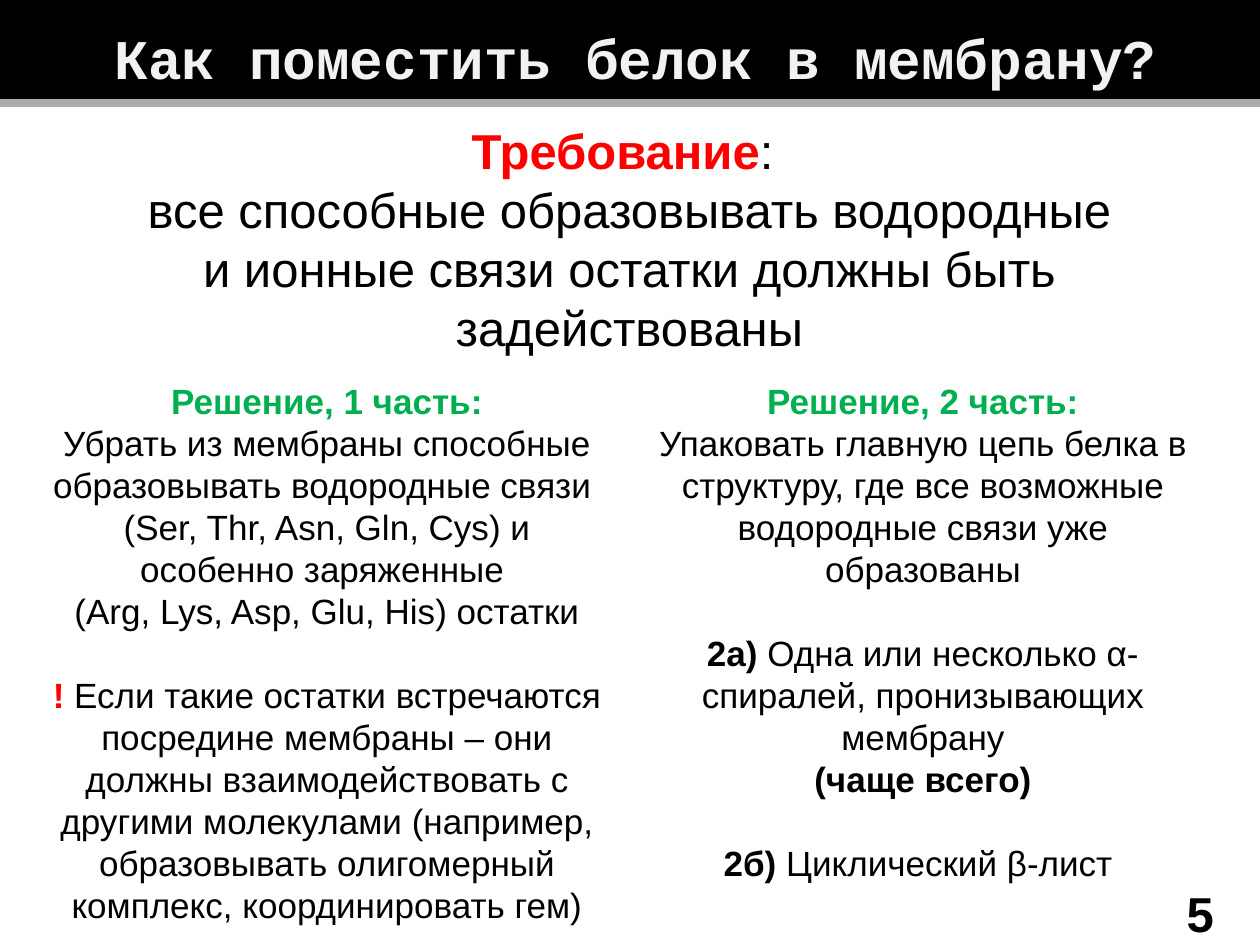
from pptx import Presentation
from pptx.dml.color import RGBColor as RGB
from pptx.enum.shapes import MSO_CONNECTOR as Conn, MSO_SHAPE as Shape
from pptx.enum.text import MSO_ANCHOR as Anchor, MSO_AUTO_SIZE as Auto, PP_ALIGN as Align
from pptx.oxml.ns import qn
from pptx.util import Inches, Pt

COLORS = {"black": "000000", "pale": "F2F2F2", "red": "FF0000",
          "green": "00B050", "gray": "AFABAB"}

# A paragraph is a list of runs (text, style); GAP opens space above the next one.
GAP = None
RED = {"color": "red", "bold": True}
GREEN = {"color": "green", "bold": True}
BOLD = {"bold": True}

TITLE = [[("Как поместить белок в мембрану?", {})]]
NEED = [
    [("Требование", RED), (": ", {})],
    [("все способные образовывать водородные и ионные связи остатки "
      "должны быть задействованы", {})],
]
PARTS = [
    [
        [("Решение, 1 часть:", GREEN)],
        [("Убрать из мембраны способные образовывать водородные связи ", {})],
        [("(Ser, Thr, Asn, Gln, Cys) и особенно заряженные ", {})],
        [("(Arg, Lys, Asp, Glu, His) остатки", {})],
        GAP,
        [("! ", RED),
         ("Если такие остатки встречаются посредине мембраны – они должны "
          "взаимодействовать с другими молекулами (например, образовывать "
          "олигомерный комплекс, координировать гем)", {})],
    ],
    [
        [("Решение, 2 часть:", GREEN)],
        [("Упаковать главную цепь белка в структуру, где все возможные "
          "водородные связи уже образованы", {})],
        GAP,
        [("2а) ", BOLD), ("Одна или несколько α-спиралей, пронизывающих мембрану", {})],
        [("(чаще всего)", BOLD)],
        GAP,
        [("2б) ", BOLD), ("Циклический β-лист ", {})],
    ],
]
NUMBER = [[("5", BOLD)]]


def color(name):
    return RGB.from_string(COLORS[name])


def write(frame, paras, size, font="Arial", tone="black", bold=False):
    frame.word_wrap = True
    frame.auto_size = Auto.NONE
    para, gap = frame.paragraphs[0], False
    for i, runs in enumerate(paras):
        if runs is GAP:
            gap = True
            continue
        if i:
            para = frame.add_paragraph()
        para.alignment = Align.CENTER
        if gap:
            para.space_before = Pt(size * 1.2)
            gap = False
        for text, style in runs:
            run = para.add_run()
            run.text = text
            run.font.name = font
            run.font.size = Pt(size)
            run.font.bold = style.get("bold", bold)
            run.font.color.rgb = color(style.get("color", tone))


def place(shape, *box):
    shape.left, shape.top, shape.width, shape.height = map(Inches, box)


def add_text(slide, box, paras, size):
    shape = slide.shapes.add_textbox(*map(Inches, box))
    write(shape.text_frame, paras, size)


def add_head(slide):
    bar = slide.shapes.add_shape(Shape.RECTANGLE, 0, 0, Inches(10), Inches(0.81))
    bar.shadow.inherit = False
    bar.fill.solid()
    bar.fill.fore_color.rgb = color("black")
    bar.line.fill.background()

    title = slide.shapes.title
    title._element.addprevious(bar._element)  # the bar lies behind the title
    place(title, 0.55, 0.15, 9, 0.56)
    frame = title.text_frame
    frame.margin_left = frame.margin_right = frame.margin_bottom = 0
    frame.margin_top = Inches(0.04)
    frame.vertical_anchor = Anchor.MIDDLE
    write(frame, TITLE, 32, font="Courier New", tone="pale", bold=True)


def add_rule(slide):
    rule = slide.shapes.add_connector(
        Conn.STRAIGHT, Inches(10), Inches(0.82), 0, Inches(0.82))
    rule.line.color.rgb = color("gray")
    rule.line.width = Pt(4.75)
    props = rule._element.spPr
    props.append(props.makeelement(qn("a:effectLst"), {}))


def main():
    deck = Presentation()
    deck.slide_width, deck.slide_height = Inches(10), Inches(7.5)
    slide = deck.slides.add_slide(deck.slide_layouts[5])
    add_head(slide)
    add_text(slide, (9.13, 6.96, 0.79, 0.54), NUMBER, 28)
    add_text(slide, (0.98, 0.91, 8.03, 1.99), NEED, 28)
    for left, height, part in zip((0.27, 5), (4.48, 4.14), PARTS):
        add_text(slide, (left, 2.96, 4.65, height), part, 20)
    add_rule(slide)
    deck.save("out.pptx")


if __name__ == "__main__":
    main()
